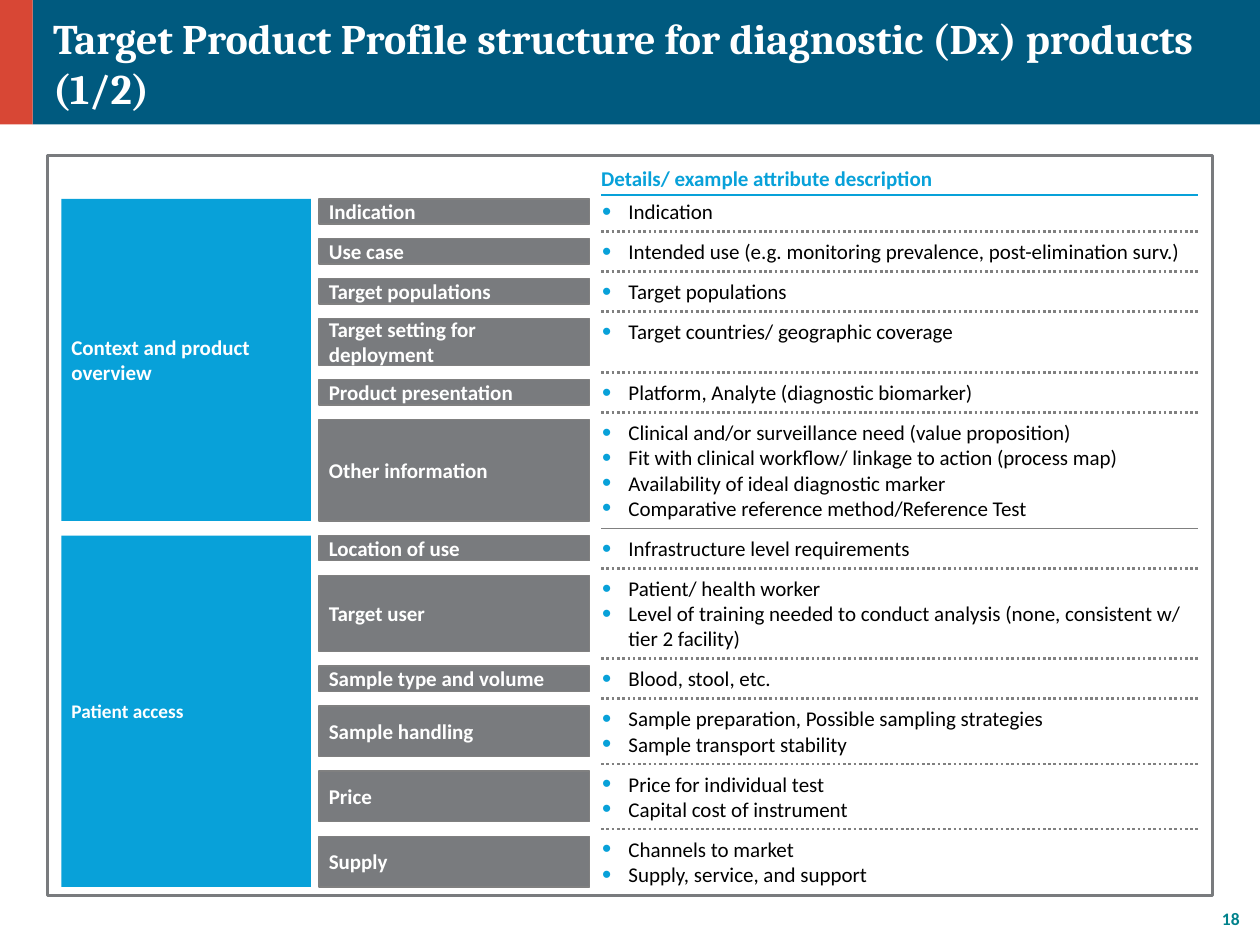
"""Build the diagnostic Target Product Profile structure slide."""
from lxml import etree
from pptx import Presentation
from pptx.dml.color import RGBColor
from pptx.enum.dml import MSO_LINE
from pptx.enum.shapes import MSO_CONNECTOR, MSO_SHAPE
from pptx.enum.text import MSO_ANCHOR, PP_ALIGN
from pptx.oxml.ns import qn
from pptx.util import Cm, Pt

RECT, STRAIGHT, DOTTED = MSO_SHAPE.RECTANGLE, MSO_CONNECTOR.STRAIGHT, MSO_LINE.ROUND_DOT
TOP, MIDDLE, BOTTOM = MSO_ANCHOR.TOP, MSO_ANCHOR.MIDDLE, MSO_ANCHOR.BOTTOM
LEFT, RIGHT = PP_ALIGN.LEFT, PP_ALIGN.RIGHT

COLORS = {
    "navy": "005A7F", "red": "D84735", "teal": "00828C", "blue": "08A1D9",
    "gray": "797B7E", "rule": "808080", "white": "FFFFFF", "black": "000000",
}
TITLE = "Target Product Profile structure for diagnostic (Dx) products (1/2)"
HEADING = "Details/ example attribute description"
PAGE = "18"
LINE_H = 0.51
SECTIONS = [
    ("Context and product overview", 12, [
        ("Indication", LINE_H, ["Indication"]),
        ("Use case", LINE_H,
         ["Intended use (e.g. monitoring prevalence, post-elimination surv.)"]),
        ("Target populations", LINE_H, ["Target populations"]),
        ("Target setting for deployment", 0.94, ["Target countries/ geographic coverage"]),
        ("Product presentation", LINE_H, ["Platform, Analyte (diagnostic biomarker)"]),
        ("Other information", 4 * LINE_H, [
            "Clinical and/or surveillance need (value proposition)",
            "Fit with clinical workflow/ linkage to action (process map)",
            "Availability of ideal diagnostic marker",
            "Comparative reference method/Reference Test"]),
    ]),
    ("Patient access", 11, [
        ("Location of use", LINE_H, ["Infrastructure level requirements"]),
        ("Target user", 3 * LINE_H, [
            "Patient/ health worker",
            "Level of training needed to conduct analysis (none, consistent w/ tier 2 facility)"]),
        ("Sample type and volume", LINE_H, ["Blood, stool, etc."]),
        ("Sample handling", 2 * LINE_H, [
            "Sample preparation, Possible sampling strategies", "Sample transport stability"]),
        ("Price", 2 * LINE_H, ["Price for individual test", "Capital cost of instrument"]),
        ("Supply", 2 * LINE_H, ["Channels to market", "Supply, service, and support"]),
    ]),
]
SECTION_X, SECTION_W = 1.24, 5.03
LABEL_X, LABEL_W = 6.43, 5.46
DETAIL_X, DETAIL_W = 12.12, 12.04
GRID_TOP, GRID_BOTTOM = 4.01, 17.88

prs = Presentation()
prs.slide_width, prs.slide_height = Cm(25.4), Cm(19.05)
slide = prs.slides.add_slide(prs.slide_layouts[6])


def rgb(name):
    return RGBColor.from_string(COLORS[name])


def add_bullet(p):
    pPr = p._p.get_or_add_pPr()
    pPr.set("marL", str(Cm(0.55)))
    pPr.set("indent", str(-Cm(0.53)))
    color = etree.SubElement(pPr, qn("a:buClr"))
    etree.SubElement(color, qn("a:srgbClr"), val=COLORS["blue"])
    etree.SubElement(pPr, qn("a:buSzPct"), val="125000")
    etree.SubElement(pPr, qn("a:buFont"), typeface="Arial")
    etree.SubElement(pPr, qn("a:buChar"), char="•")


def write(s, texts, color, size=12, bold=True, font="Calibri", anchor=MIDDLE,
          align=LEFT, inset=0, wrap=True, bullets=False):
    tf = s.text_frame
    frame = {"word_wrap": wrap, "vertical_anchor": anchor}
    frame.update({f"margin_{side}": Cm(inset) for side in ("left", "top", "right", "bottom")})
    for name, value in frame.items():
        setattr(tf, name, value)
    for i, text in enumerate(texts):
        p = tf.paragraphs[0] if i == 0 else tf.add_paragraph()
        p.alignment = align
        if bullets:
            add_bullet(p)
        r = p.add_run()
        r.text = text
        for name, value in {"name": font, "size": Pt(size), "bold": bold}.items():
            setattr(r.font, name, value)
        r.font.color.rgb = rgb(color)


def add_box(x, y, w, h, fill, line=None, width=0.75):
    s = slide.shapes.add_shape(RECT, Cm(x), Cm(y), Cm(w), Cm(h))
    s.shadow.inherit = False
    s.fill.solid()
    s.fill.fore_color.rgb = rgb(fill)
    if line:
        s.line.color.rgb = rgb(line)
        s.line.width = Pt(width)
    else:
        s.line.fill.background()
    return s


def add_text(x, y, w, h, texts, color, **style):
    s = slide.shapes.add_textbox(Cm(x), Cm(y), Cm(w), Cm(h))
    write(s, texts, color, **style)


def add_rule(y, color, width=0.75, dash=None):
    s = slide.shapes.add_connector(
        STRAIGHT, Cm(DETAIL_X), Cm(y), Cm(DETAIL_X + DETAIL_W), Cm(y))
    s.line.color.rgb = rgb(color)
    s.line.width = Pt(width)
    if dash:
        s.line.dash_style = dash
    etree.SubElement(s._element.spPr, qn("a:effectLst"))


add_box(0.66, 0, 24.74, 2.51, "navy")
add_box(0, 0, 0.66, 2.51, "red")
add_text(24.56, 18.31, 0.43, 0.43, [PAGE], "teal", size=10, align=RIGHT, wrap=False)
add_text(1.07, 0.23, 23.93, 2.06, [TITLE], "white", size=24, font="Cambria")
add_box(0.96, 3.13, 23.49, 14.93, "white", "gray", 1.5)
add_text(DETAIL_X, 3.33, DETAIL_W, LINE_H, [HEADING], "blue", anchor=BOTTOM)
add_rule(3.93, "blue")

heights = [h for _, _, rows in SECTIONS for _, h, _ in rows]
gap = (GRID_BOTTOM - GRID_TOP - sum(heights)) / (len(heights) - 1)
y = GRID_TOP
for n, (section, size, rows) in enumerate(SECTIONS):
    if n:
        add_rule(y - gap / 2, "rule")
    section_h = sum(h for _, h, _ in rows) + gap * (len(rows) - 1)
    s = add_box(SECTION_X, y, SECTION_W, section_h, "blue")
    write(s, [section], "white", size=size, inset=0.2)
    for i, (label, h, details) in enumerate(rows):
        if i:
            add_rule(y - gap / 2, "rule", 1.5, DOTTED)
        s = add_box(LABEL_X, y, LABEL_W, h, "gray", "rule")
        write(s, [label], "white", inset=0.2)
        add_text(DETAIL_X, y, DETAIL_W, h, details, "black",
                 bold=False, anchor=TOP, bullets=True)
        y += h + gap

prs.save("out.pptx")
